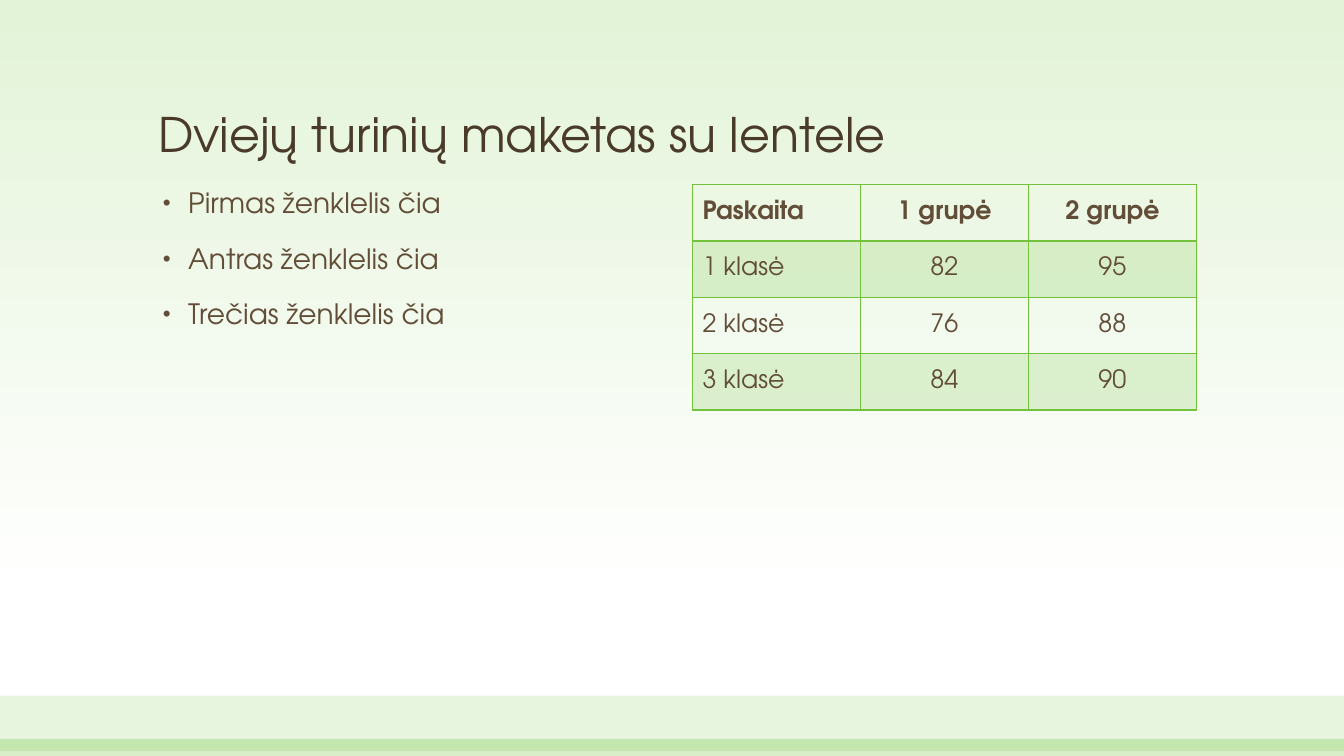
from lxml import etree
from pptx import Presentation
from pptx.dml.color import RGBColor
from pptx.enum.shapes import MSO_SHAPE
from pptx.enum.text import MSO_ANCHOR, MSO_AUTO_SIZE, PP_ALIGN
from pptx.oxml.ns import qn
from pptx.util import Cm, Pt

RECT = MSO_SHAPE.RECTANGLE
LOW, MID, TOP = MSO_ANCHOR.BOTTOM, MSO_ANCHOR.MIDDLE, MSO_ANCHOR.TOP
LEFT, CENTER = PP_ALIGN.LEFT, PP_ALIGN.CENTER
FIXED = MSO_AUTO_SIZE.NONE

# Content
TITLE = "Dviejų turinių maketas su lentele"
ITEMS = ["Pirmas ženklelis čia", "Antras ženklelis čia", "Trečias ženklelis čia"]
GRADES = [
    ("Paskaita", "1 grupė", "2 grupė"),
    ("1 klasė", 82, 95),
    ("2 klasė", 76, 88),
    ("3 klasė", 84, 90),
]

# Theme
THEME = {
    "font": "TeX Gyre Adventor",
    "green": "72C23C",
    "dark": "4A3A2A",
    "brown": "624D38",
    "sky": [(0, "E3F3D8"), (0.79, "FFFFFF")],
    "title": 34,
    "body": 20,
    "cell": 18,
}

# Layout in centimetres
WIDE, HIGH = 33.87, 19.05
EDGE, UPPER = 3.73, 4.65
HALF, FULL = 12.7, 26.42
ROW = 1.42
BANDS = [(17.53, 1.4, 17), (18.62, 0.43, 28)]  # top, height, opacity


def style(item, **values):
    for name, value in values.items():
        setattr(item, name, value)


def place(shape, left, top, width, height):
    style(shape, left=Cm(left), top=Cm(top), width=Cm(width), height=Cm(height))


def write(para, text, size, color, bold=False, **form):
    run = para.add_run()
    run.text = str(text)
    style(run.font, name=THEME["font"], size=Pt(THEME[size]), bold=bold)
    run.font.color.rgb = RGBColor.from_string(THEME[color])
    style(para, **form)


def tint(shape, alpha):
    """Fill with see-through green."""
    shape.fill.solid()
    shape.fill.fore_color.rgb = RGBColor.from_string(THEME["green"])
    props = shape._tc.tcPr if hasattr(shape, "_tc") else shape._element.spPr
    color = props.find(qn("a:solidFill")).find(qn("a:srgbClr"))
    etree.SubElement(color, qn("a:alpha"), val=str(alpha * 1000))


def border(cell, widths):
    props = cell._tc.get_or_add_tcPr()
    for spot, (side, width) in enumerate(widths.items()):
        line = etree.Element(qn("a:ln" + side), w=str(Pt(width)))
        fill = etree.SubElement(line, qn("a:solidFill"))
        etree.SubElement(fill, qn("a:srgbClr"), val=THEME["green"])
        props.insert(spot, line)


def bullet(para):
    props = para._p.get_or_add_pPr()
    style_in = {"marL": Cm(0.76), "indent": Cm(-0.64)}
    for name, value in style_in.items():
        props.set(name, str(value))
    etree.SubElement(props, qn("a:buSzPct"), val="80000")
    etree.SubElement(props, qn("a:buFont"), typeface="Arial")
    etree.SubElement(props, qn("a:buChar"), char="•")


def paint(slide):
    fill = slide.background.fill
    fill.gradient()
    fill.gradient_angle = 270
    for stop, (spot, color) in zip(fill.gradient_stops, THEME["sky"]):
        stop.position = spot
        stop.color.rgb = RGBColor.from_string(color)
    for top, height, alpha in BANDS:
        band = slide.shapes.add_shape(RECT, 0, Cm(top), Cm(WIDE), Cm(height))
        tint(band, alpha)
        band.line.fill.background()
        band.shadow.inherit = False


def fill_text(slide):
    head, body = slide.shapes.title, slide.placeholders[1]
    place(head, EDGE, 1.22, FULL, 3.02)
    place(body, EDGE, UPPER, HALF, 12.07)
    for box, anchor in ((head, LOW), (body, TOP)):
        style(box.text_frame, vertical_anchor=anchor, auto_size=FIXED, word_wrap=True)
    write(head.text_frame.paragraphs[0], TITLE, "title", "dark",
          alignment=LEFT, line_spacing=0.9)
    frame = body.text_frame
    for num, text in enumerate(ITEMS):
        para = frame.add_paragraph() if num else frame.paragraphs[0]
        write(para, text, "body", "brown",
              alignment=LEFT, line_spacing=0.9, space_before=Pt(18))
        bullet(para)


def add_grades(slide):
    rows, cols = len(GRADES), len(GRADES[0])
    left = EDGE + FULL - HALF
    table = slide.shapes.add_table(rows, cols, Cm(left), Cm(UPPER),
                                   Cm(HALF), Cm(ROW * rows)).table
    table.horz_banding = False
    for r, values in enumerate(GRADES):
        for c, value in enumerate(values):
            cell = table.cell(r, c)
            cell.vertical_anchor = MID
            write(cell.text_frame.paragraphs[0], value, "cell", "brown",
                  bold=r == 0, alignment=CENTER if c else LEFT)
            if r % 2:
                tint(cell, 20)
            else:
                cell.fill.background()
            border(cell, {"L": 1, "R": 1, "T": 2 if r == 1 else 1,
                          "B": 2 if r == 0 else 1})


def main():
    deck = Presentation()
    style(deck, slide_width=Cm(WIDE), slide_height=Cm(HIGH))
    slide = deck.slides.add_slide(deck.slide_layouts[1])
    paint(slide)
    fill_text(slide)
    add_grades(slide)
    deck.save("out.pptx")


if __name__ == "__main__":
    main()
